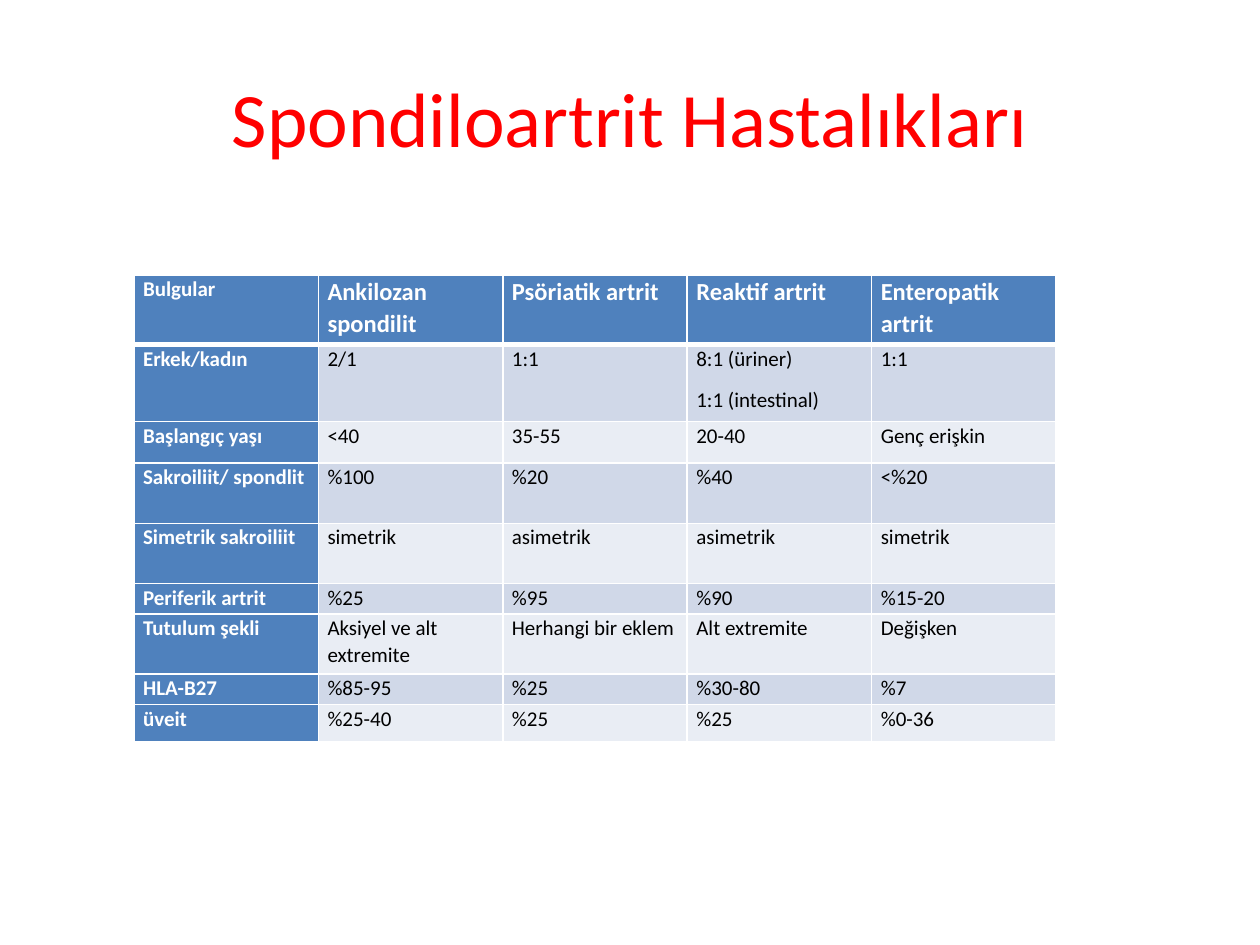
from pptx import Presentation
from pptx.dml.color import RGBColor
from pptx.enum.text import MSO_ANCHOR, PP_ALIGN
from pptx.oxml import parse_xml
from pptx.oxml.ns import nsdecls
from pptx.util import Pt

FONT = "Calibri"
WHITE, BLACK, RED = "FFFFFF", "000000", "FF0000"
HEAD, BANDS = "4F81BD", ("D0D8E8", "E9EDF4")

ROWS = [
    ["Bulgular", "Ankilozan spondilit", "Psöriatik artrit",
     "Reaktif artrit", "Enteropatik artrit"],
    ["Erkek/kadın", "2/1", "1:1", "8:1 (üriner)\n1:1 (intestinal)", "1:1"],
    ["Başlangıç yaşı", "<40", "35-55", "20-40", "Genç erişkin"],
    ["Sakroiliit/ spondlit", "%100", "%20", "%40", "<%20"],
    ["Simetrik sakroiliit", "simetrik", "asimetrik", "asimetrik", "simetrik"],
    ["Periferik artrit", "%25", "%95", "%90", "%15-20"],
    ["Tutulum şekli", "Aksiyel ve alt extremite", "Herhangi bir eklem",
     "Alt extremite", "Değişken"],
    ["HLA-B27", "%85-95", "%25", "%30-80", "%7"],
    ["üveit", "%25-40", "%25", "%25", "%0-36"],
]
HEIGHTS = [40, 44, 23.5, 34.5, 34.5, 17.25, 34.5, 17.25, 21.6]


def paint(fmt, color):
    fmt.rgb = RGBColor.from_string(color)


def add_run(para, text, size, color, bold=False):
    run = para.add_run()
    run.text = text
    font = run.font
    font.name, font.size, font.bold = FONT, Pt(size), bold
    paint(font.color, color)


def add_lines(cell, base):
    """Draw white borders; base is the width of the bottom one."""
    props = cell._tc.get_or_add_tcPr()
    for side, width in (("L", 1), ("R", 1), ("T", 1), ("B", base)):
        props.append(parse_xml(
            f'<a:ln{side} {nsdecls("a")} w="{Pt(width)}"><a:solidFill>'
            f'<a:srgbClr val="{WHITE}"/></a:solidFill></a:ln{side}>'))


def fill_cell(cell, text, row, col):
    label = row == 0 or col == 0
    cell.margin_left = cell.margin_right = Pt(5.25)
    cell.margin_top = cell.margin_bottom = 0
    add_lines(cell, 1 if row else 3)
    cell.fill.solid()
    paint(cell.fill.fore_color, HEAD if label else BANDS[(row - 1) % 2])
    frame = cell.text_frame
    for i, line in enumerate(text.split("\n")):
        para = frame.add_paragraph() if i else frame.paragraphs[0]
        para.line_spacing, para.space_after = 1.07, Pt(8)
        add_run(para, line, 14 if row == 0 and col else 12,
                WHITE if label else BLACK, label)


def add_title(slide, x, y, w, h):
    title = slide.shapes.title
    title.left, title.top, title.width, title.height = map(Pt, (x, y, w, h))
    frame = title.text_frame
    frame.vertical_anchor = MSO_ANCHOR.MIDDLE
    para = frame.paragraphs[0]
    para.alignment = PP_ALIGN.CENTER
    add_run(para, "Spondiloartrit Hastalıkları", 44, RED)


def add_grid(slide, x, y, w):
    count = len(ROWS[0])
    table = slide.shapes.add_table(
        len(ROWS), count, Pt(x), Pt(y), Pt(w), Pt(sum(HEIGHTS))).table
    table.first_col = True
    for col in table.columns:
        col.width = Pt(w / count)
    for r, (texts, height) in enumerate(zip(ROWS, HEIGHTS)):
        table.rows[r].height = Pt(height)
        for c, text in enumerate(texts):
            fill_cell(table.cell(r, c), text, r, c)


def main():
    deck = Presentation()
    deck.slide_width, deck.slide_height = Pt(720), Pt(540)
    slide = deck.slides.add_slide(deck.slide_layouts[5])
    # Title
    add_title(slide, 36, 21.6, 648, 90)
    # Comparison table
    add_grid(slide, 76.5, 157, 527)
    deck.save("out.pptx")


if __name__ == "__main__":
    main()
